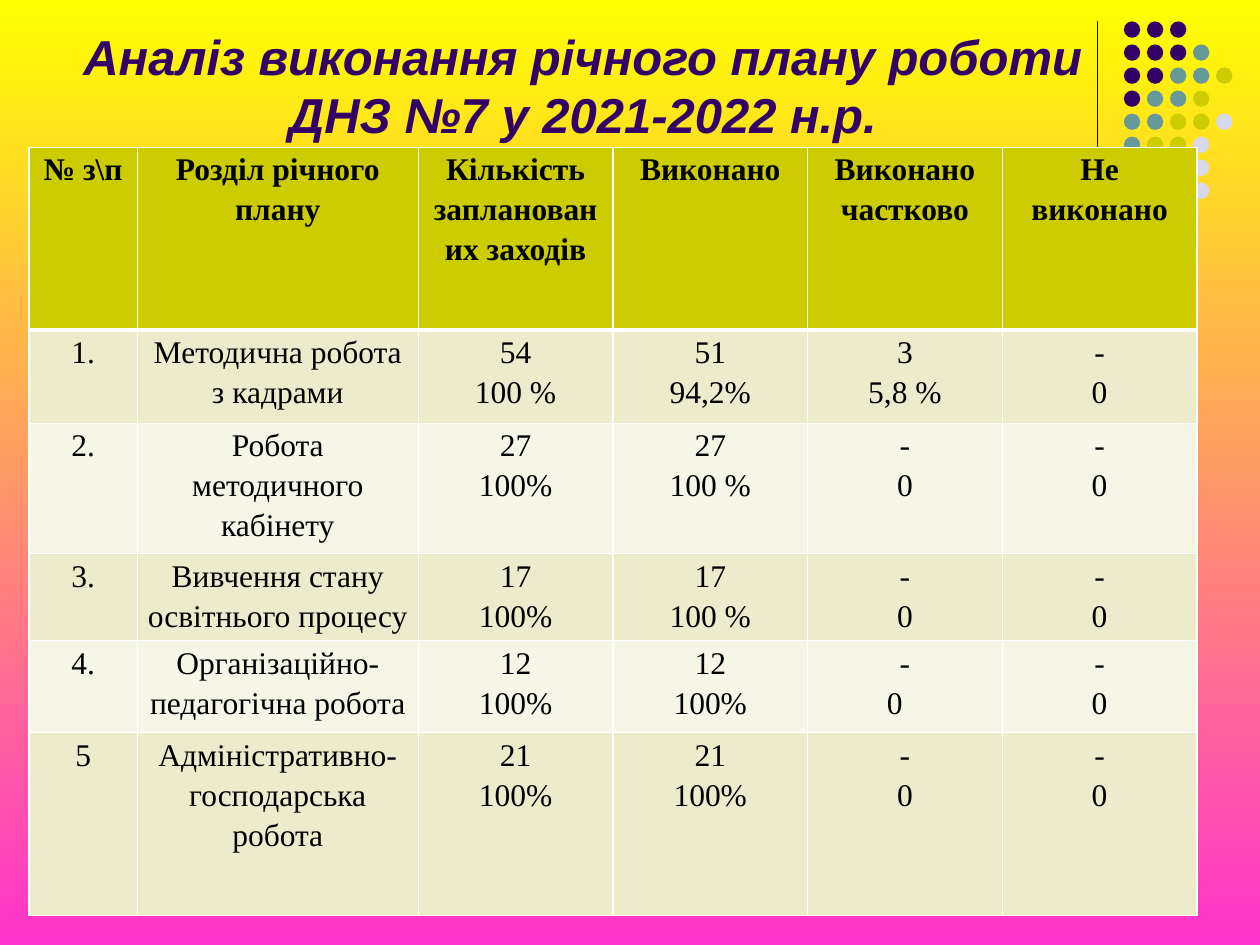
"""Build the slide on how the yearly plan of a kindergarten was carried out."""
from lxml.etree import SubElement
from pptx import Presentation
from pptx.dml.color import RGBColor
from pptx.enum.shapes import MSO_CONNECTOR as Line, MSO_SHAPE as Shape
from pptx.enum.text import MSO_ANCHOR as Anchor, PP_ALIGN as Align
from pptx.oxml.ns import qn
from pptx.util import Inches, Pt

BLACK = RGBColor(0, 0, 0)
WHITE = RGBColor(255, 255, 255)
YELLOW = RGBColor(255, 255, 0)
PINK = RGBColor(255, 51, 204)
PURPLE = RGBColor(51, 0, 102)
TEAL = RGBColor(102, 153, 153)
OLIVE = RGBColor(204, 204, 0)
LILAC = RGBColor(216, 216, 236)
BANDS = RGBColor(236, 236, 204), RGBColor(246, 246, 231)

TITLE = "Аналіз виконання річного плану роботи ДНЗ №7 у 2021-2022 н.р."
HEAD = ["№ з\\п", "Розділ річного плану", "Кількість\nзапланованих заходів",
        "Виконано", "Виконано частково", "Не виконано"]
NONE = "-\n0"
ROWS = [
    ["1.", "Методична робота з кадрами", "54\n100 %", "51\n94,2%", "3\n5,8 %", NONE],
    ["2.", "Робота методичного кабінету", "27\n100%", "27\n100 %", NONE, NONE],
    ["3.", "Вивчення стану освітнього процесу", "17\n100%", "17\n100 %", NONE, NONE],
    ["4.", "Організаційно-педагогічна робота", "12\n100%", "12\n100%", NONE, NONE],
    ["5", "Адміністративно-господарська робота", "21\n100%", "21\n100%", NONE, NONE],
]
WIDTHS = [0.86, 2.23] + [1.545] * 4
HEIGHTS = [1.45, 0.74, 0.97, 0.66, 0.73, 1.45]
DOTS = ["PPP", "PPPT", "PPTTO", "PTTO", "TTOOL", "TOOL", "OOLL", " L L"]
HUES = {"P": PURPLE, "T": TEAL, "O": OLIVE, "L": LILAC}
STEP = 1.28 / 7


def paint_back(slide):
    fill = slide.background.fill
    fill.gradient()
    fill.gradient_angle = 270
    for stop, hue in zip(fill.gradient_stops, (YELLOW, PINK)):
        stop.color.rgb = hue


def draw_rule(slide):
    rule = slide.shapes.add_connector(
        Line.STRAIGHT, Inches(8.71), Inches(0.17), Inches(8.71), Inches(1.83))
    rule.line.color.rgb = BLACK
    rule.line.width = Pt(0.75)
    SubElement(rule._element.spPr, qn("a:effectLst"))


def draw_dots(slide):
    for row, marks in enumerate(DOTS):
        for col, mark in enumerate(marks):
            if mark not in HUES:
                continue
            dot = slide.shapes.add_shape(
                Shape.OVAL, Inches(8.92 + col * STEP), Inches(0.17 + row * STEP),
                Inches(0.13), Inches(0.13))
            dot.shadow.inherit = False
            dot.fill.solid()
            dot.fill.fore_color.rgb = HUES[mark]
            dot.line.fill.background()


def set_font(para, name, size, hue, bold, slant=False):
    font = para.font
    font.name, font.size, font.bold, font.italic = name, Pt(size), bold, slant
    font.color.rgb = hue


def add_title(slide):
    box = slide.shapes.add_textbox(Inches(0.5), Inches(0.55), Inches(8.25), Inches(1.09))
    frame = box.text_frame
    frame.word_wrap = True
    frame.vertical_anchor = Anchor.BOTTOM
    frame.margin_bottom = Inches(0.5)
    frame.text = TITLE
    para = frame.paragraphs[0]
    para.alignment = Align.CENTER
    set_font(para, "Arial", 28, PURPLE, True, True)


def add_edges(cell, low, top):
    props = cell._tc.get_or_add_tcPr()
    for at, (side, width) in enumerate(
            [("lnL", 1), ("lnR", 1), ("lnT", top), ("lnB", low)]):
        edge = SubElement(props, qn(f"a:{side}"), w=str(Pt(width)))
        fill = SubElement(edge, qn("a:solidFill"))
        SubElement(fill, qn("a:srgbClr"), val=str(WHITE))
        props.insert(at, edge)


def fill_cell(cell, text, row):
    cell.fill.solid()
    cell.fill.fore_color.rgb = BANDS[(row - 1) % 2] if row else OLIVE
    cell.margin_left = cell.margin_right = Inches(0.07)
    cell.margin_top = cell.margin_bottom = 0
    cell.text = text
    for para in cell.text_frame.paragraphs:
        para.alignment = Align.CENTER
        para.line_spacing = 1.15
        set_font(para, "Times New Roman", 18, BLACK, row == 0)
    add_edges(cell, 1 if row else 3, 3 if row == 1 else 1)


def add_grid(slide):
    data = [HEAD] + ROWS
    table = slide.shapes.add_table(
        len(data), len(HEAD), Inches(0.23), Inches(1.17),
        Inches(sum(WIDTHS)), Inches(sum(HEIGHTS))).table
    for col, width in zip(table.columns, WIDTHS):
        col.width = Inches(width)
    for row, (texts, height) in enumerate(zip(data, HEIGHTS)):
        table.rows[row].height = Inches(height)
        for col, text in enumerate(texts):
            fill_cell(table.cell(row, col), text, row)
    zero = table.cell(4, 4).text_frame.paragraphs[1]
    zero.alignment = Align.LEFT
    zero._p.get_or_add_pPr().set("marL", str(Inches(0.56)))


def main():
    deck = Presentation()
    deck.slide_width, deck.slide_height = Inches(10), Inches(7.5)
    slide = deck.slides.add_slide(deck.slide_layouts[6])
    paint_back(slide)
    draw_rule(slide)
    draw_dots(slide)
    add_title(slide)
    add_grid(slide)
    deck.save("out.pptx")


if __name__ == "__main__":
    main()
